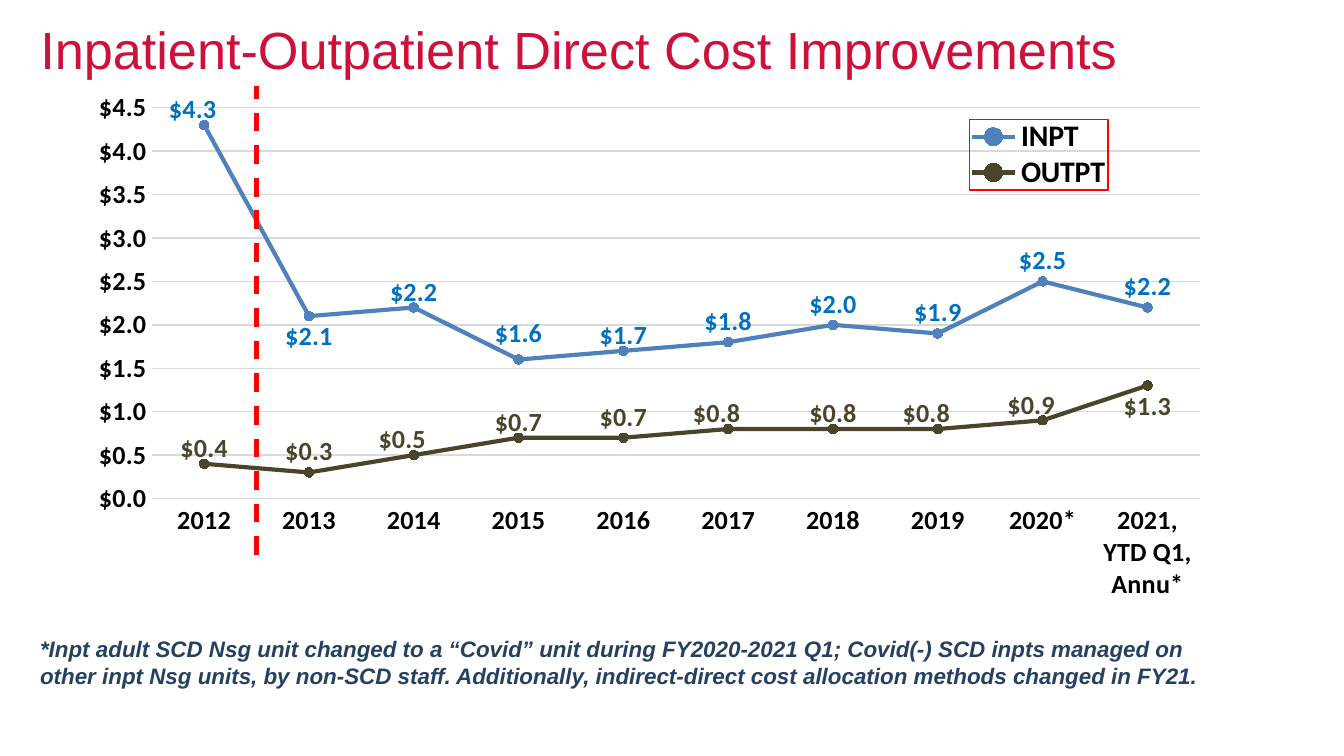
from lxml.etree import SubElement
from pptx import Presentation
from pptx.chart.data import CategoryChartData
from pptx.dml.color import RGBColor
from pptx.enum.chart import XL_CHART_TYPE as ChartType, XL_LABEL_POSITION as LabelPosition
from pptx.enum.chart import XL_LEGEND_POSITION as LegendPosition, XL_MARKER_STYLE as Marker
from pptx.enum.chart import XL_TICK_MARK as Tick
from pptx.enum.dml import MSO_LINE_DASH_STYLE as Dash
from pptx.enum.shapes import MSO_CONNECTOR as Connector
from pptx.enum.text import MSO_ANCHOR as Anchor, MSO_AUTO_SIZE as AutoSize, PP_ALIGN as Align
from pptx.oxml import parse_xml
from pptx.oxml.ns import nsdecls, qn
from pptx.util import Inches, Pt

TITLE = "Inpatient-Outpatient Direct Cost Improvements"
FOOTNOTE = (
    "*Inpt adult SCD Nsg unit changed to a “Covid” unit during FY2020-2021 Q1; "
    "Covid(-) SCD inpts managed on other inpt Nsg units, by non-SCD staff. "
    "Additionally, indirect-direct cost allocation methods changed in FY21."
)
DOLLARS = '"$"#,##0.0'
YEARS = [str(year) for year in range(2012, 2020)] + ["2020*", "2021, YTD Q1, Annu*"]
# name, values, line colour, label colour, index of the point labelled below its marker
SERIES = [
    ("INPT", (4.3, 2.1, 2.2, 1.6, 1.7, 1.8, 2.0, 1.9, 2.5, 2.2), "4F81BD", "0070C0", 1),
    ("OUTPT", (0.4, 0.3, 0.5, 0.7, 0.7, 0.8, 0.8, 0.8, 0.9, 1.3), "4A452A", "4A452A", 9),
]
# label shifts right and down from the standard place, in hundredths of the chart
LABEL_SHIFTS = {
    "INPT": ((-1, 0, 0, 0, 0, 0, 0, 0, 0, 0), (2, -1, 2, 0, 2, 1, 1, 1, 1, 1)),
    "OUTPT": ((0, 0, -1, 0, 0, -1, 0, -1, -1, 0), (2, 1, 2, 2, 1, 2, 2, 2, 2, -1)),
}


def rgb(value):
    return RGBColor.from_string(value)


def set_font(font, name, size, color, bold=False, italic=False):
    font.name, font.size = name, Pt(size)
    font.bold, font.italic = bold, italic
    font.color.rgb = rgb(color)


def set_line(line, color, width):
    line.color.rgb = rgb(color)
    line.width = Pt(width)


def set_layout(parent, index, modes, *lengths):
    """Give a chart part a manual layout; lengths are fractions of the chart."""
    for layout in parent.findall(qn("c:layout")):
        parent.remove(layout)
    sizes = "".join(f'<c:{tag} val="{value}"/>' for tag, value in zip("xywh", lengths))
    parent.insert(index, parse_xml(
        f'<c:layout {nsdecls("c")}><c:manualLayout>{modes}{sizes}'
        '</c:manualLayout></c:layout>'))


def add_title(slide):
    title = slide.shapes.title
    title.left, title.top = Inches(0.2), Inches(0.08)
    title.width, title.height = Inches(9.25), Inches(0.47)
    frame = title.text_frame
    frame.text = TITLE
    frame.auto_size = AutoSize.NONE
    frame.vertical_anchor = Anchor.TOP
    para = frame.paragraphs[0]
    para.alignment = Align.LEFT
    set_font(para.font, "Arial", 28, "CD113B")


def format_axes(chart):
    for axis in (chart.category_axis, chart.value_axis):
        axis.major_tick_mark = axis.minor_tick_mark = Tick.NONE
        set_font(axis.tick_labels.font, "Calibri", 14, "000000", bold=True)
    set_line(chart.category_axis.format.line, "D9D9D9", 0.75)
    values = chart.value_axis
    values.minimum_scale, values.maximum_scale, values.major_unit = 0, 4.5, 0.5
    values.tick_labels.number_format = DOLLARS
    values.tick_labels.number_format_is_linked = False
    values.format.line.fill.background()
    set_line(values.major_gridlines.format.line, "D9D9D9", 0.75)


def format_labels(series, color, below):
    labels = series.data_labels
    labels.show_value = True
    labels.number_format, labels.number_format_is_linked = DOLLARS, False
    labels.position = LabelPosition.ABOVE
    set_font(labels.font, "Calibri", 14, color, bold=True)
    for index, (right, down) in enumerate(zip(*LABEL_SHIFTS[series.name])):
        label = series.points[index].data_label
        label.position = LabelPosition.BELOW if index == below else LabelPosition.ABOVE
        set_font(label.font, "Calibri", 14, color, bold=True)
    for element, right, down in zip(labels._element.findall(qn("c:dLbl")),
                                    *LABEL_SHIFTS[series.name]):
        set_layout(element, 1, "", right / 100, down / 100)


def format_series(series, color):
    series.smooth = False
    set_line(series.format.line, color, 2.25)
    marker = series.marker
    marker.style, marker.size = Marker.CIRCLE, 5
    marker.format.fill.solid()
    marker.format.fill.fore_color.rgb = rgb(color)
    marker.format.line.color.rgb = rgb(color)


def format_legend(chart, modes):
    chart.has_legend = True
    legend = chart.legend
    legend.position = LegendPosition.BOTTOM
    legend.include_in_layout = False
    set_font(legend.font, "Calibri", 16, "000000", bold=True)
    element = legend._element
    set_layout(element, 1, modes, 0.78, 0.06, 0.12, 0.13)
    element.find(qn("c:overlay")).addnext(parse_xml(
        f'<c:spPr {nsdecls("c", "a")}><a:ln w="9525"><a:solidFill>'
        '<a:srgbClr val="FF0000"/></a:solidFill></a:ln></c:spPr>'))


def add_cost_chart(slide):
    data = CategoryChartData(number_format=DOLLARS)
    data.categories = YEARS
    for name, values, *_ in SERIES:
        data.add_series(name, values)
    chart = slide.shapes.add_chart(
        ChartType.LINE_MARKERS, Inches(0.53), Inches(0.64),
        Inches(8.57), Inches(4.04), data).chart
    chart.has_title = False
    set_font(chart.font, "Calibri", 10, "000000")
    plot = chart.plots[0]
    plot.vary_by_categories = False
    format_axes(chart)
    for series, (_, _, color, label_color, below) in zip(plot.series, SERIES):
        format_series(series, color)
        format_labels(series, label_color, below)
    edges = '<c:xMode val="edge"/><c:yMode val="edge"/>'
    format_legend(chart, edges)
    set_layout(chart._chartSpace.chart.plotArea, 0,
               '<c:layoutTarget val="inner"/>' + edges, 0.07, 0.04, 0.91, 0.72)


def add_footnote(slide):
    box = slide.shapes.add_textbox(Inches(0.2), Inches(4.68), Inches(8.94), Inches(0.5))
    frame = box.text_frame
    frame.word_wrap = True
    frame.auto_size = AutoSize.SHAPE_TO_FIT_TEXT
    frame.text = FOOTNOTE
    set_font(frame.paragraphs[0].font, "Arial", 12, "254061", bold=True, italic=True)


def add_divider(slide):
    divider = slide.shapes.add_connector(
        Connector.STRAIGHT, Inches(1.91), Inches(4.13), Inches(1.91), Inches(0.64))
    set_line(divider.line, "FF0000", 2.5)
    divider.line.dash_style = Dash.DASH
    SubElement(divider._element.spPr, qn("a:effectLst"))


def main():
    deck = Presentation()
    deck.slide_width, deck.slide_height = Inches(10), Inches(10 * 9 / 16)
    slide = deck.slides.add_slide(deck.slide_layouts.get_by_name("Title Only"))
    add_title(slide)
    add_cost_chart(slide)
    add_footnote(slide)
    add_divider(slide)
    deck.save("out.pptx")


if __name__ == "__main__":
    main()
